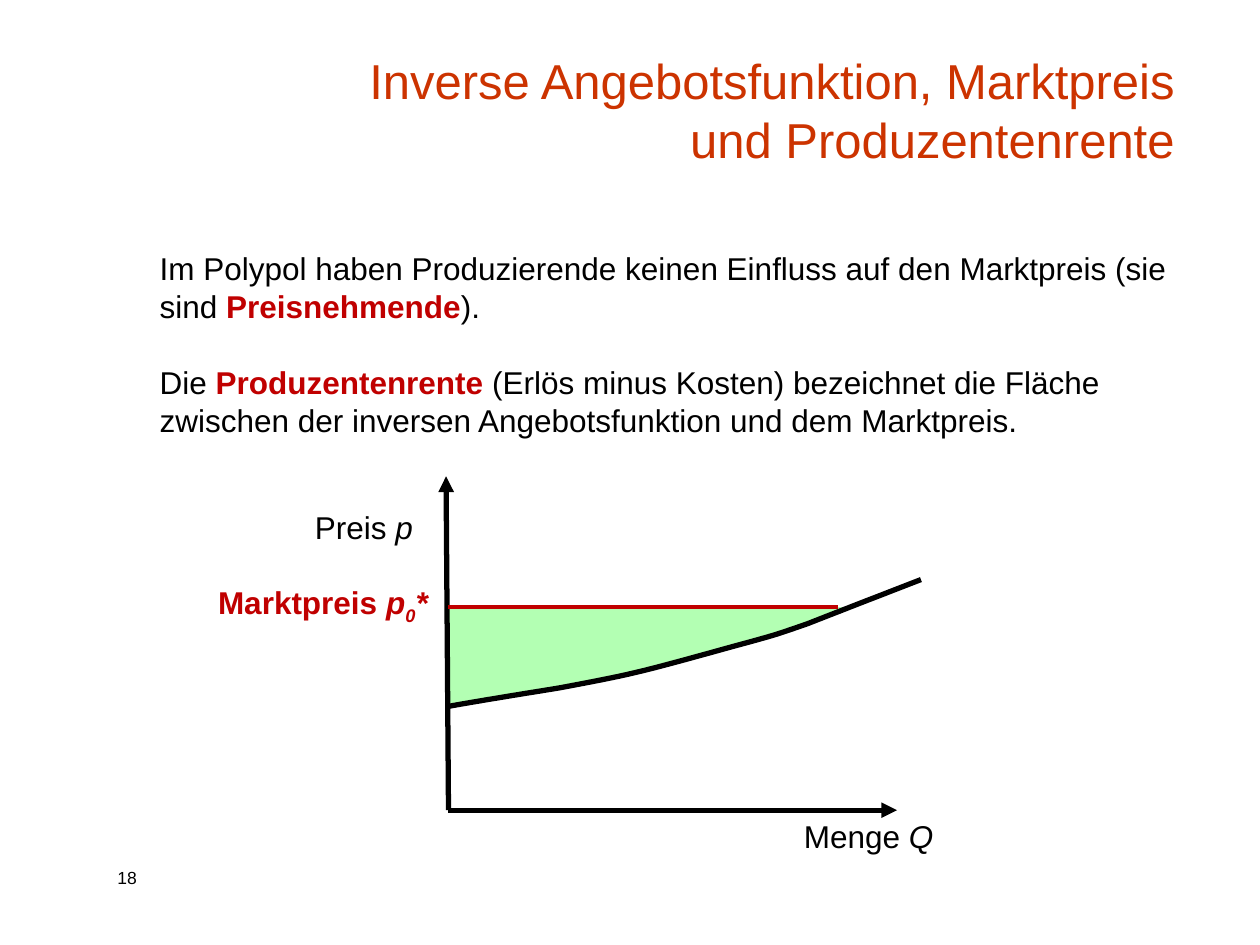
from dataclasses import dataclass
from typing import NamedTuple

from lxml.etree import SubElement
from pptx import Presentation
from pptx.dml.color import RGBColor
from pptx.enum.shapes import MSO_CONNECTOR as Connector
from pptx.enum.text import MSO_ANCHOR as Anchor, MSO_AUTO_SIZE as AutoSize, PP_ALIGN as Align
from pptx.oxml.ns import qn
from pptx.util import Pt


@dataclass(frozen=True)
class Theme:
    font: str = "Arial"
    black: RGBColor = RGBColor(0x00, 0x00, 0x00)
    heading: RGBColor = RGBColor(0xCC, 0x33, 0x00)
    accent: RGBColor = RGBColor(0xC0, 0x00, 0x00)
    surplus: RGBColor = RGBColor(0xB3, 0xFF, 0xB3)
    title_size: float = 28
    text_size: float = 18
    number_size: float = 10
    stroke: float = 3


THEME = Theme()


class Point(NamedTuple):
    x: float
    y: float


class Box(NamedTuple):
    left: float
    top: float
    width: float
    height: float


class Span(NamedTuple):
    text: str
    color: RGBColor | None = None
    bold: bool | None = None
    italic: bool | None = None
    baseline: int = 0


@dataclass(frozen=True)
class TextBlock:
    box: Box
    paragraphs: list[list[Span]]
    color: RGBColor = THEME.black
    size: float = THEME.text_size
    bold: bool = False
    margins: tuple[float, float] = (0, 0)
    gap: float = 0


@dataclass(frozen=True)
class Line:
    start: Point
    end: Point
    color: RGBColor = THEME.black
    width: float = THEME.stroke
    arrow: bool = False


ORIGIN = Point(256.3, 463)
PRICE_Y = 347
SUPPLY = [
    Point(254.9, 403.9),
    Point(265.7, 401.8), Point(301, 396.1), Point(319.7, 393.1),
    Point(338.4, 389.5), Point(350.6, 387.4), Point(368.6, 383),
    Point(385.9, 378.7), Point(411.1, 371.5), Point(427, 367.2),
    Point(442.8, 362.9), Point(445, 362.2), Point(461.5, 356.4),
    Point(478.1, 349.9), Point(513.4, 336.2), Point(526.3, 331.2),
]
SURPLUS = [
    Point(256.3, PRICE_Y), Point(486.7, PRICE_Y), Point(442.1, 362.2),
    Point(397.4, 376.6), Point(315.4, 393.8), Point(256.3, 403.9),
]
LINES = [
    Line(ORIGIN, Point(512.6, ORIGIN.y), arrow=True),
    Line(ORIGIN, Point(254.9, 272.2), arrow=True),
    Line(Point(ORIGIN.x, PRICE_Y), Point(478.8, PRICE_Y), THEME.accent, 0),
]
TEXTS = [
    TextBlock(Box(60, 491.8, 48, 18.7), [[Span("18")]],
              size=THEME.number_size, margins=(7.2, 3.6)),
    TextBlock(Box(180, 290.2, 93.6, 21.6), [[Span("Preis"), Span(" p", italic=True)]]),
    TextBlock(Box(459.4, 466.6, 79.2, 21.6), [[Span("Menge"), Span(" Q", italic=True)]]),
    TextBlock(
        Box(84.2, 139, 614.2, 115.2),
        [
            [Span("Im Polypol haben Produzierende keinen Einfluss auf den Marktpreis (sie sind "),
             Span("Preisnehmende", THEME.accent, True), Span(").")],
            [Span("Die "), Span("Produzentenrente ", THEME.accent, True),
             Span("(Erlös minus Kosten) bezeichnet die Fläche zwischen der inversen "
                  "Angebotsfunktion und dem Marktpreis.")],
        ],
        margins=(7.2, 3.6), gap=21.6,
    ),
    TextBlock(
        Box(124.6, 333.4, 123.1, 24.5),
        [[Span("Marktpreis"), Span(" p", italic=True),
          Span("0", italic=True, baseline=-25000), Span("*", italic=True)]],
        color=THEME.accent, bold=True,
    ),
]


def style_font(font, size: float, color: RGBColor, bold: bool = False) -> None:
    font.name = THEME.font
    font.size = Pt(size)
    font.bold = bold
    font.color.rgb = color


def place(shape, box: Box) -> None:
    shape.left, shape.top, shape.width, shape.height = map(Pt, box)


def draw_title(slide, text: str) -> None:
    title = slide.shapes.title
    place(title, Box(150.5, 30.2, 527.8, 69.8))
    frame = title.text_frame
    frame.text = text
    frame.vertical_anchor = Anchor.BOTTOM
    frame.auto_size = AutoSize.NONE
    paragraph = frame.paragraphs[0]
    paragraph.alignment = Align.RIGHT
    style_font(paragraph.font, THEME.title_size, THEME.heading)


def draw_text(slide, block: TextBlock) -> None:
    frame = slide.shapes.add_textbox(*map(Pt, block.box)).text_frame
    frame.word_wrap = True
    frame.margin_left = frame.margin_right = Pt(block.margins[0])
    frame.margin_top = frame.margin_bottom = Pt(block.margins[1])
    for index, spans in enumerate(block.paragraphs):
        paragraph = frame.add_paragraph() if index else frame.paragraphs[0]
        if index:
            paragraph.space_before = Pt(block.gap)
        style_font(paragraph.font, block.size, block.color, block.bold)
        for span in spans:
            run = paragraph.add_run()
            run.text = span.text
            run.font.bold = span.bold
            run.font.italic = span.italic
            if span.color is not None:
                run.font.color.rgb = span.color
            if span.baseline:
                run._r.get_or_add_rPr().set("baseline", str(span.baseline))


def draw_line(slide, line: Line) -> None:
    connector = slide.shapes.add_connector(
        Connector.STRAIGHT, *map(Pt, line.start), *map(Pt, line.end))
    connector.line.color.rgb = line.color
    connector.line.width = Pt(line.width)
    if line.arrow:
        SubElement(connector.line._get_or_add_ln(), qn("a:tailEnd"), type="triangle")
    SubElement(connector._element.spPr, qn("a:effectLst"))


def bezier_points(controls: list[Point], steps: int = 10) -> list[Point]:
    points = [controls[0]]
    for first in range(0, len(controls) - 1, 3):
        corners = controls[first:first + 4]
        for step in range(1, steps + 1):
            t = step / steps
            weights = ((1 - t) ** 3, 3 * t * (1 - t) ** 2, 3 * t * t * (1 - t), t ** 3)
            points.append(Point(sum(w * c.x for w, c in zip(weights, corners)),
                                sum(w * c.y for w, c in zip(weights, corners))))
    return points


def draw_outline(slide, points: list[Point], close: bool):
    start, *rest = [(Pt(point.x), Pt(point.y)) for point in points]
    builder = slide.shapes.build_freeform(*start)
    builder.add_line_segments(rest, close=close)
    shape = builder.convert_to_shape()
    shape.shadow.inherit = False
    return shape


def draw_surplus(slide) -> None:
    area = draw_outline(slide, SURPLUS, close=True)
    area.fill.solid()
    area.fill.fore_color.rgb = THEME.surplus
    area.line.fill.background()


def draw_supply(slide) -> None:
    curve = draw_outline(slide, bezier_points(SUPPLY), close=False)
    curve.fill.background()
    curve.line.color.rgb = THEME.black
    curve.line.width = Pt(THEME.stroke)


def main() -> None:
    presentation = Presentation()
    presentation.slide_width, presentation.slide_height = Pt(720), Pt(540)
    slide = presentation.slides.add_slide(presentation.slide_layouts[5])
    draw_title(slide, "Inverse Angebotsfunktion, Marktpreis und Produzentenrente")
    draw_surplus(slide)
    for line in LINES:
        draw_line(slide, line)
    draw_supply(slide)
    for block in TEXTS:
        draw_text(slide, block)
    presentation.save("out.pptx")


if __name__ == "__main__":
    main()
